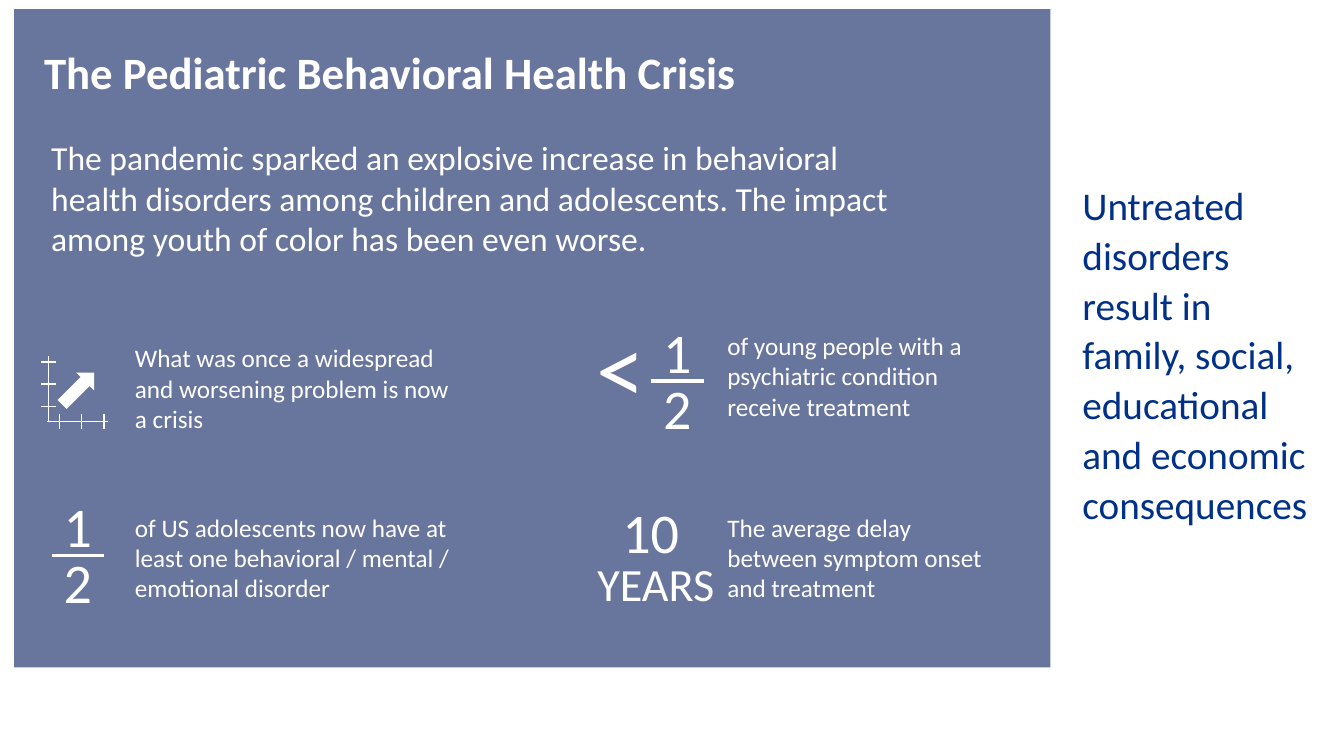
"""Builds the slide on the pediatric behavioral health crisis."""
from pptx import Presentation
from pptx.dml.color import RGBColor
from pptx.enum.shapes import MSO_CONNECTOR as Line, MSO_SHAPE as Shape
from pptx.enum.text import MSO_ANCHOR as Anchor, PP_ALIGN as Align
from pptx.oxml.ns import qn
from pptx.util import Cm, Pt
from lxml.etree import SubElement

WHITE = RGBColor(0xFF, 0xFF, 0xFF)
SLATE = RGBColor(0x68, 0x75, 0x9C)
NAVY = RGBColor(0x00, 0x30, 0x87)

PANEL = (0.36, 0.23, 26.11, 16.59)
TITLE = ("The Pediatric Behavioral Health Crisis", (0.86, 1.02, 21.92, 1.75))
LEAD = ("The pandemic sparked an explosive increase in behavioral health disorders "
        "among children and adolescents. The impact among youth of color has been even worse.",
        (1.04, 3.33, 22.28, 3.33))
ASIDE = ("Untreated disorders result in family, social, educational and economic consequences",
         (27.03, 4.37, 6.4, 10.01))
FACTS = [
    ("What was once a widespread and worsening problem is now a crisis", (3.15, 8.51, 8.46, 2.57)),
    ("of young people with a psychiatric condition receive treatment", (18.08, 8.2, 7.06, 2.57)),
    ("of US adolescents now have at least one behavioral / mental / emotional disorder",
     (3.15, 12.78, 8.94, 2.57)),
    ("The average delay between symptom onset and treatment", (18.08, 12.78, 7.37, 2.57)),
]
HALVES = [(0.36, 12.55), (15.47, 8.15)]
LESS = ("<", (13.23, 9.14, 4.85, 3.63))
DELAY = [[("10", 40), (" ", 33), None, ("YEARS", 33)]]
DELAY_BOX = (14.27, 12.93, 4.52, 3.56)
AXES = [(1.22, 8.97, 1.22, 10.64), (1.19, 10.62, 2.72, 10.62)]
ARROW = (1.4, 9.47, 1.14, 0.64)
TICKS, STEP, TICK = 3, 0.56, 0.36


def add_text(shapes, paras, box, size, color=WHITE, anchor=Anchor.TOP, bold=False, **form):
    """Adds a text box; a paragraph is a string or a list of (text, size), None for a break."""
    frame = shapes.add_textbox(*map(Cm, box)).text_frame
    frame.word_wrap, frame.vertical_anchor = True, anchor
    for i, runs in enumerate(paras):
        para = frame.paragraphs[0] if i == 0 else frame.add_paragraph()
        for name, value in form.items():
            setattr(para, name, value)
        for part in [(runs, size)] if isinstance(runs, str) else runs:
            if part is None:
                para.add_line_break()
                continue
            run = para.add_run()
            run.text = part[0]
            run.font.color.rgb = color
            look = {"name": "Calibri", "size": Pt(part[1]), "bold": bold}
            for name, value in look.items():
                setattr(run.font, name, value)


def add_line(shapes, ends, width):
    """Adds a plain white line."""
    line = shapes.add_connector(Line.STRAIGHT, *map(Cm, ends))
    line.line.color.rgb, line.line.width = WHITE, Pt(width)
    SubElement(line._element.spPr, qn("a:effectLst"))


def add_block(shapes, kind, box, color):
    """Adds a filled shape with no outline."""
    block = shapes.add_shape(kind, *map(Cm, box))
    block.shadow.inherit = False
    block.fill.solid()
    block.fill.fore_color.rgb = color
    block.line.fill.background()
    return block


def add_half(shapes, left, top):
    """Adds the fraction one half."""
    add_text(shapes, ["1", "2"], (left, top, 3.2, 3.56), 40,
             alignment=Align.CENTER, line_spacing=Pt(40))
    add_line(shapes, (left + 0.94, top + 1.45, left + 2.26, top + 1.45), 2.5)


def add_graph(shapes):
    """Adds the rising graph icon."""
    for ends in AXES:
        add_line(shapes, ends, 1)
    add_block(shapes, Shape.RIGHT_ARROW, ARROW, WHITE).rotation = 315
    for i in range(TICKS):
        x, y = 1.5 + i * STEP, 10.24 - i * STEP
        add_line(shapes, (x, 10.8, x, 10.8 - TICK), 1)
        add_line(shapes, (1.4, y, 1.4 - TICK, y), 1)


def main():
    """Builds and saves the deck."""
    deck = Presentation()
    deck.slide_width, deck.slide_height = Cm(33.87), Cm(19.05)
    shapes = deck.slides.add_slide(deck.slide_layouts[6]).shapes
    add_block(shapes, Shape.RECTANGLE, PANEL, SLATE)
    add_text(shapes, [TITLE[0]], TITLE[1], 32, anchor=Anchor.MIDDLE, bold=True, line_spacing=0.9)
    add_text(shapes, [LEAD[0]], LEAD[1], 24)
    add_text(shapes, [ASIDE[0]], ASIDE[1], 28, NAVY, line_spacing=Pt(35.6))
    for text, box in FACTS:
        add_text(shapes, [text], box, 18)
    add_graph(shapes.add_group_shape().shapes)
    for spot in HALVES:
        add_half(shapes.add_group_shape().shapes, *spot)
    add_text(shapes, [LESS[0]], LESS[1], 70, alignment=Align.CENTER, line_spacing=Pt(40))
    add_text(shapes, DELAY, DELAY_BOX, 33, alignment=Align.CENTER, line_spacing=Pt(33))
    deck.save("out.pptx")


if __name__ == "__main__":
    main()
